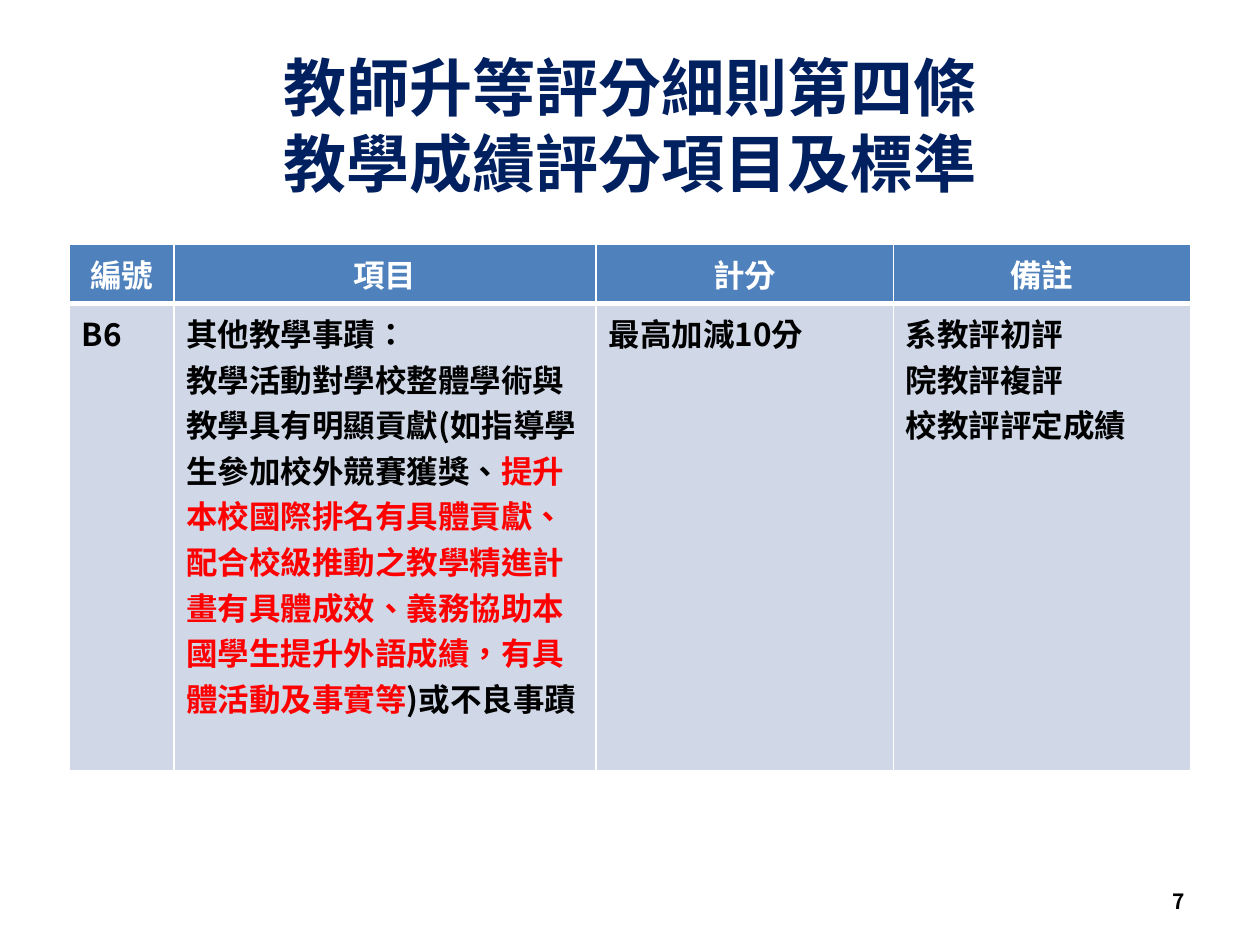
from dataclasses import dataclass

from lxml.etree import SubElement
from pptx import Presentation
from pptx.dml.color import RGBColor
from pptx.enum.lang import MSO_LANGUAGE_ID
from pptx.enum.text import MSO_ANCHOR, PP_ALIGN
from pptx.oxml.ns import qn
from pptx.util import Inches, Pt


@dataclass(frozen=True)
class Theme:
    navy: str = "002060"
    blue: str = "4F81BD"
    pale: str = "D0D8E8"
    white: str = "FFFFFF"
    black: str = "000000"
    red: str = "FF0000"
    head: int = 36
    body: int = 18
    foot: int = 12
    sans: str = "Noto Sans CJK SC"
    serif: str = "Times New Roman"


@dataclass(frozen=True)
class Span:
    text: str
    color: str = Theme.black


@dataclass(frozen=True)
class Column:
    name: str
    width: float
    lines: tuple[tuple[Span, ...], ...]


THEME = Theme()
ROWS = (0.47, 3.71)
COLUMNS = (
    Column("編號", 0.83, ((Span("B6"),),)),
    Column("項目", 3.35, (
        (Span("其他教學事蹟："),),
        (
            Span("教學活動對學校整體學術與教學具有明顯貢獻(如指導學生參加校外競賽獲獎、"),
            Span("提升本校國際排名有具體貢獻、配合校級推動之教學精進計畫有具體成效、"
                 "義務協助本國學生提升外語成績，有具體活動及事實等", THEME.red),
            Span(")或不良事蹟"),
        ),
    )),
    Column("計分", 2.36, ((Span("最高加減10分"),),)),
    Column("備註", 2.36, (
        (Span("系教評初評"),),
        (Span("院教評複評"),),
        (Span("校教評評定成績"),),
    )),
)


def add_run(para, span: Span, size: int, font: str = THEME.sans) -> None:
    run = para.add_run()
    run.text = span.text
    run.font.size = Pt(size)
    run.font.bold = True
    run.font.name = font
    run.font.color.rgb = RGBColor.from_string(span.color)
    run.font.language_id = MSO_LANGUAGE_ID.TRADITIONAL_CHINESE
    SubElement(run.font._element, qn("a:ea"), typeface=THEME.sans)


def place(shape, left: float, top: float, width: float, height: float) -> None:
    shape.left, shape.top = Inches(left), Inches(top)
    shape.width, shape.height = Inches(width), Inches(height)


def add_title(slide) -> None:
    title = slide.shapes.title
    place(title, 0.5, 0.36, 9, 1.25)
    title.text_frame.vertical_anchor = MSO_ANCHOR.MIDDLE
    para = title.text_frame.paragraphs[0]
    para.alignment = PP_ALIGN.CENTER
    add_run(para, Span("教師升等評分細則第四條", THEME.navy), THEME.head, THEME.serif)
    para.add_line_break()
    add_run(para, Span("教學成績評分項目及標準", THEME.navy), THEME.head, THEME.serif)


def style_cell(cell, fill: str, top: int, bottom: int) -> None:
    props = cell._tc.get_or_add_tcPr()
    for side, width in (("L", 1), ("R", 1), ("T", top), ("B", bottom)):
        line = SubElement(props, qn(f"a:ln{side}"), w=str(Pt(width)))
        paint = SubElement(line, qn("a:solidFill"))
        SubElement(paint, qn("a:srgbClr"), val=THEME.white)
    cell.fill.solid()
    cell.fill.fore_color.rgb = RGBColor.from_string(fill)


def fill_cell(cell, lines: tuple[tuple[Span, ...], ...], align: PP_ALIGN) -> None:
    frame = cell.text_frame
    for i, spans in enumerate(lines):
        para = frame.add_paragraph() if i else frame.paragraphs[0]
        para.alignment = align
        for span in spans:
            add_run(para, span, THEME.body)


def add_grid(slide) -> None:
    frame = slide.shapes.add_table(
        len(ROWS), len(COLUMNS),
        Inches(0.55), Inches(1.94), Inches(8.9), Inches(sum(ROWS)))
    table = frame.table
    for row, height in zip(table.rows, ROWS):
        row.height = Inches(height)
    for i, column in enumerate(COLUMNS):
        table.columns[i].width = Inches(column.width)
        head, body = table.cell(0, i), table.cell(1, i)
        style_cell(head, THEME.blue, 1, 3)
        style_cell(body, THEME.pale, 3, 1)
        head.vertical_anchor = MSO_ANCHOR.MIDDLE
        fill_cell(head, ((Span(column.name, THEME.white),),), PP_ALIGN.CENTER)
        fill_cell(body, column.lines, PP_ALIGN.LEFT)


def add_number(slide) -> None:
    box = slide.shapes.add_textbox(
        Inches(7.17), Inches(6.95), Inches(2.33), Inches(0.4))
    frame = box.text_frame
    frame.word_wrap = True
    frame.vertical_anchor = MSO_ANCHOR.MIDDLE
    para = frame.paragraphs[0]
    para.alignment = PP_ALIGN.RIGHT
    add_run(para, Span("7"), THEME.foot)


def main() -> None:
    deck = Presentation()
    deck.slide_width, deck.slide_height = Inches(10), Inches(7.5)
    slide = deck.slides.add_slide(deck.slide_layouts[5])
    add_number(slide)
    add_grid(slide)
    add_title(slide)
    deck.save("out.pptx")


if __name__ == "__main__":
    main()
